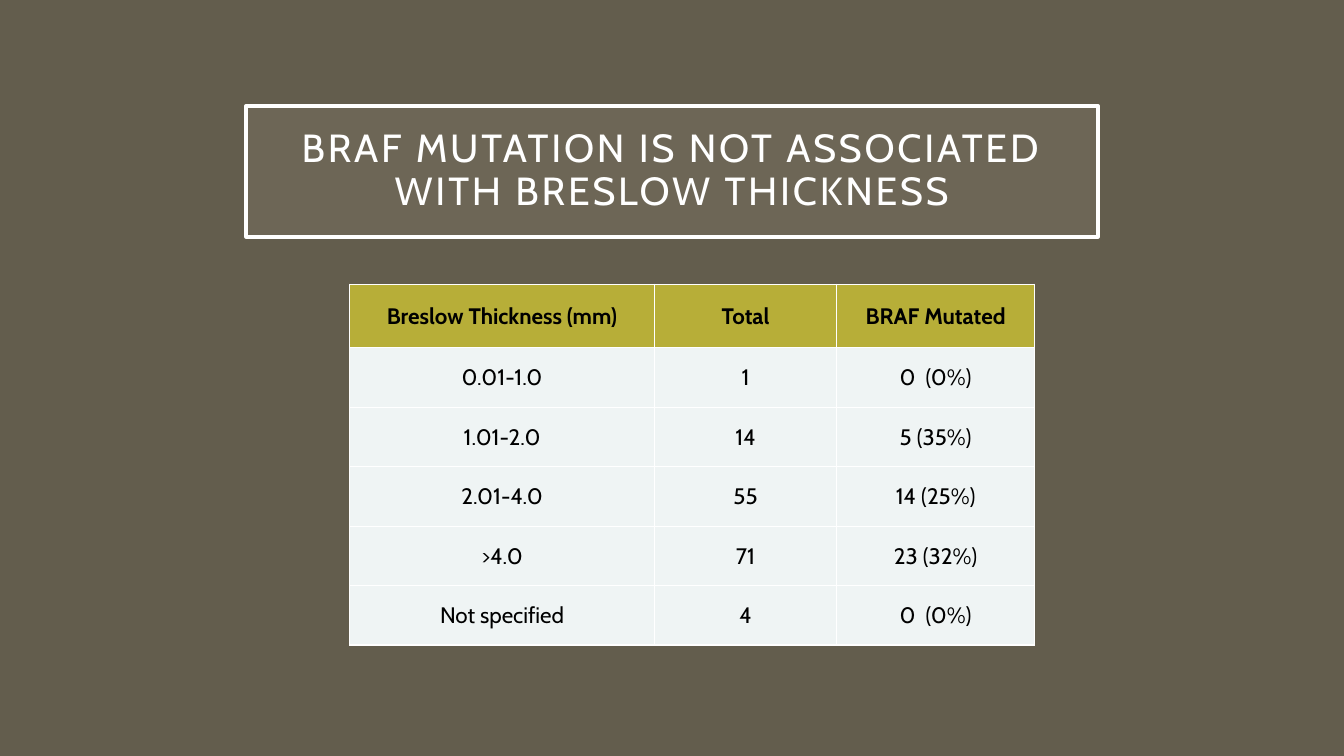
"""Build the slide on BRAF mutation and Breslow thickness."""

from dataclasses import dataclass

from pptx import Presentation
from pptx.dml.color import RGBColor as Rgb
from pptx.enum.text import MSO_ANCHOR as Anchor, MSO_AUTO_SIZE as AutoSize, PP_ALIGN as Align
from pptx.oxml.ns import qn
from pptx.oxml.xmlchemy import OxmlElement
from pptx.slide import Slide
from pptx.table import _Cell as Cell
from pptx.text.text import _Paragraph as Paragraph, _Run as Run
from pptx.util import Inches, Pt


@dataclass(frozen=True)
class Theme:
    font: str = "Cabin"
    background: str = "635D4D"
    title_fill: str = "A7A08E"
    title_opacity: int = 15
    white: str = "FFFFFF"
    black: str = "000000"
    header_fill: str = "B7AE38"
    body_fill: str = "EFF4F4"
    title_size: float = 28
    table_size: float = 16
    title_spacing: float = 2
    title_border: float = 2.5
    cell_border: float = 1


@dataclass(frozen=True)
class ThicknessGroup:
    thickness: str
    total: str
    mutated: str


THEME = Theme()
TITLE = "BRAF MUTATION IS NOT ASSOCIATED WITH BRESLOW THICKNESS"
HEADER = ThicknessGroup("Breslow Thickness (mm)", "Total", "BRAF Mutated")
GROUPS = [
    ThicknessGroup("0.01-1.0", "1", "0  (0%)"),
    ThicknessGroup("1.01-2.0", "14", "5 (35%)"),
    ThicknessGroup("2.01-4.0", "55", "14 (25%)"),
    ThicknessGroup(">4.0", "71", "23 (32%)"),
    ThicknessGroup("Not specified", "4", "0  (0%)"),
]
COLUMN_WIDTHS = [3.02, 1.81, 1.96]
HEADER_HEIGHT, GROUP_HEIGHT = 0.63, 0.59


def add_run(paragraph: Paragraph, text: str, size: float, color: str, bold: bool = False) -> Run:
    paragraph.alignment = Align.CENTER
    run = paragraph.add_run()
    run.text = text
    run.font.name = THEME.font
    run.font.size = Pt(size)
    run.font.bold = bold
    run.font.color.rgb = Rgb.from_string(color)
    return run


def format_title(slide: Slide) -> None:
    title = slide.shapes.title
    title.left, title.top = Inches(2.44), Inches(1.05)
    title.width, title.height = Inches(8.45), Inches(1.3)
    title.fill.solid()
    title.fill.fore_color.rgb = Rgb.from_string(THEME.title_fill)
    alpha = OxmlElement("a:alpha")
    alpha.set("val", str(THEME.title_opacity * 1000))
    title._element.spPr.find(f"{qn('a:solidFill')}/{qn('a:srgbClr')}").append(alpha)
    title.line.color.rgb = Rgb.from_string(THEME.white)
    title.line.width = Pt(THEME.title_border)

    frame = title.text_frame
    frame.word_wrap = True
    frame.auto_size = AutoSize.NONE
    frame.vertical_anchor = Anchor.MIDDLE
    frame.margin_left = frame.margin_right = Inches(0.2)
    frame.margin_top = frame.margin_bottom = Inches(0.2)
    heading = frame.paragraphs[0]
    heading.line_spacing = 0.9
    run = add_run(heading, TITLE, THEME.title_size, THEME.white)
    run._r.get_or_add_rPr().set("spc", str(int(THEME.title_spacing * 100)))


def add_borders(cell: Cell) -> None:
    properties = cell._tc.get_or_add_tcPr()
    for side in ("a:lnL", "a:lnR", "a:lnT", "a:lnB"):
        border = OxmlElement(side)
        border.set("w", str(Pt(THEME.cell_border)))
        fill = OxmlElement("a:solidFill")
        color = OxmlElement("a:srgbClr")
        color.set("val", THEME.white)
        fill.append(color)
        border.append(fill)
        properties.append(border)


def fill_cell(cell: Cell, text: str, is_header: bool) -> None:
    add_borders(cell)
    cell.fill.solid()
    cell.fill.fore_color.rgb = Rgb.from_string(THEME.header_fill if is_header else THEME.body_fill)
    cell.vertical_anchor = Anchor.MIDDLE
    cell.margin_left = cell.margin_right = cell.margin_top = Inches(0.01)
    cell.margin_bottom = 0
    add_run(cell.text_frame.paragraphs[0], text, THEME.table_size, THEME.black, is_header)


def add_thickness_table(slide: Slide) -> None:
    rows = [HEADER, *GROUPS]
    heights = [HEADER_HEIGHT] + [GROUP_HEIGHT] * len(GROUPS)
    table = slide.shapes.add_table(
        len(rows), len(COLUMN_WIDTHS), Inches(3.47), Inches(2.82),
        Inches(sum(COLUMN_WIDTHS)), Inches(sum(heights)),
    ).table
    table.horz_banding = False
    for column, width in zip(table.columns, COLUMN_WIDTHS):
        column.width = Inches(width)
    for row, height, group in zip(table.rows, heights, rows):
        row.height = Inches(height)
        for cell, text in zip(row.cells, (group.thickness, group.total, group.mutated)):
            fill_cell(cell, text, group is HEADER)


def main() -> None:
    deck = Presentation()
    deck.slide_width, deck.slide_height = Inches(13.33), Inches(7.5)
    slide = deck.slides.add_slide(deck.slide_layouts.get_by_name("Title Only"))
    slide.background.fill.solid()
    slide.background.fill.fore_color.rgb = Rgb.from_string(THEME.background)
    format_title(slide)
    add_thickness_table(slide)
    deck.save("out.pptx")


if __name__ == "__main__":
    main()
